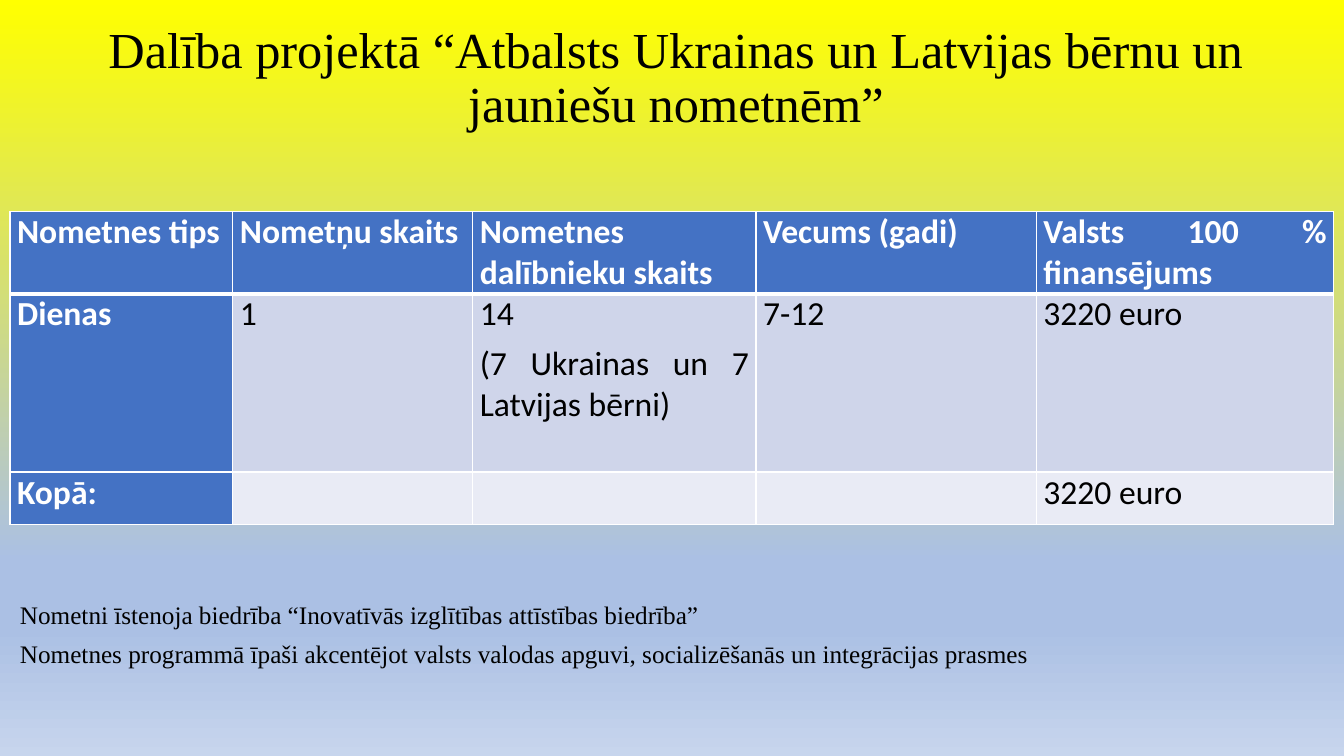
import dataclasses

import lxml.etree
import pptx
import pptx.dml.color
import pptx.enum.text
import pptx.oxml
import pptx.oxml.ns
import pptx.util

WIDE = pptx.util.Inches(13.33)
HIGH = pptx.util.Inches(7.5)
ALIGN = pptx.enum.text.PP_ALIGN
ANCHOR = pptx.enum.text.MSO_ANCHOR
BLACK, WHITE, BLUE = "000000", "FFFFFF", "4472C4"
BANDS = ("CFD5EA", "E9EBF5")
STOPS = ((0, "FFFF00"), (74, "ABC0E4"), (83, "ABC0E4"), (100, "C7D5ED"))
COLS = (16.58, 17.85, 21.08, 20.86, 22.13)
ROWS = (10.8, 23.6, 6.93)
CELLS = (
    ("Nometnes tips", "Nometņu skaits", "Nometnes dalībnieku skaits",
     "Vecums (gadi)", "Valsts 100 % finansējums"),
    ("Dienas", "1", "14\n(7 Ukrainas un 7 Latvijas bērni)", "7-12", "3220 euro"),
    ("Kopā:", "", "", "", "3220 euro"),
)


@dataclasses.dataclass(frozen=True)
class Box:
    left: float
    top: float
    width: float
    height: float


@dataclasses.dataclass(frozen=True)
class Style:
    font: dict
    para: dict
    hue: str = BLACK


@dataclasses.dataclass(frozen=True)
class Block:
    box: Box
    text: str
    style: Style
    anchor: ANCHOR


BODY = {"alignment": ALIGN.JUSTIFY, "space_after": pptx.util.Pt(6)}
HEAD = {"alignment": ALIGN.CENTER, "line_spacing": 0.9}
GRID = Box(0.75, 28, sum(COLS), sum(ROWS))
BLOCKS = (
    Block(Box(3.68, 2, 93.25, 17),
          "Dalība projektā “Atbalsts Ukrainas un Latvijas bērnu un jauniešu nometnēm”",
          Style({"name": "Times New Roman", "size": pptx.util.Pt(36)}, HEAD),
          ANCHOR.MIDDLE),
    Block(Box(0.75, 78.67, 97.3, 10.53),
          "Nometni īstenoja biedrība “Inovatīvās izglītības attīstības biedrība”\n"
          "Nometnes programmā īpaši akcentējot valsts valodas apguvi, "
          "socializēšanās un integrācijas prasmes",
          Style({"name": "Times New Roman", "size": pptx.util.Pt(18)}, BODY),
          ANCHOR.TOP),
)


def share(part: float, whole: int) -> int:
    return round(whole * part / 100)


def place(box: Box) -> tuple:
    return (share(box.left, WIDE), share(box.top, HIGH),
            share(box.width, WIDE), share(box.height, HIGH))


def paint(hue: str) -> pptx.dml.color.RGBColor:
    return pptx.dml.color.RGBColor.from_string(hue)


def apply(thing, form: dict) -> None:
    for key, value in form.items():
        setattr(thing, key, value)


def write(frame, text: str, style: Style) -> None:
    frame.text = text
    for para in frame.paragraphs:
        apply(para, style.para)
        for run in para.runs:
            apply(run.font, style.font)
            run.font.color.rgb = paint(style.hue)


def shade(slide) -> None:
    stops = "".join(f'<a:gs pos="{pos * 1000}"><a:srgbClr val="{hue}"/></a:gs>'
                    for pos, hue in STOPS)
    spaces = pptx.oxml.ns.nsdecls("a")
    grade = pptx.oxml.parse_xml(
        f'<a:gradFill {spaces} rotWithShape="1"><a:gsLst>{stops}</a:gsLst>'
        '<a:lin ang="5400000" scaled="0"/></a:gradFill>')
    fill = slide.background.fill
    fill.solid()
    solid = slide.element.find(".//" + pptx.oxml.ns.qn("a:solidFill"))
    solid.getparent().replace(solid, grade)


def edge(cell, sides: dict) -> None:
    props = cell._tc.get_or_add_tcPr()
    for spot, (side, width) in enumerate(sides.items()):
        line = lxml.etree.Element(pptx.oxml.ns.qn(f"a:ln{side}"),
                                  w=str(pptx.util.Pt(width)))
        solid = lxml.etree.SubElement(line, pptx.oxml.ns.qn("a:solidFill"))
        lxml.etree.SubElement(solid, pptx.oxml.ns.qn("a:srgbClr"), val=WHITE)
        props.insert(spot, line)


def draw_block(slide, block: Block) -> None:
    frame = slide.shapes.add_textbox(*place(block.box)).text_frame
    apply(frame, {"word_wrap": True, "vertical_anchor": block.anchor})
    write(frame, block.text, block.style)


def draw_cell(cell, row: int, col: int) -> None:
    head = row == 0 or col == 0
    side = pptx.util.Inches(0.07)
    apply(cell, {"margin_left": side, "margin_right": side,
                 "margin_top": 0, "margin_bottom": 0})
    cell.fill.solid()
    cell.fill.fore_color.rgb = paint(BLUE if head else BANDS[row - 1])
    font = {"name": "Calibri", "size": pptx.util.Pt(24), "bold": head}
    write(cell.text_frame, CELLS[row][col],
          Style(font, BODY, WHITE if head else BLACK))
    edge(cell, {"L": 1, "R": 1, "T": 3 if row == 1 else 1,
                "B": 3 if row == 0 else 1})


def draw_grid(slide) -> None:
    table = slide.shapes.add_table(len(ROWS), len(COLS), *place(GRID)).table
    for col, part in zip(table.columns, COLS):
        col.width = share(part, WIDE)
    for row, part in zip(table.rows, ROWS):
        row.height = share(part, HIGH)
    for row in range(len(ROWS)):
        for col in range(len(COLS)):
            draw_cell(table.cell(row, col), row, col)


def main() -> None:
    deck = pptx.Presentation()
    apply(deck, {"slide_width": WIDE, "slide_height": HIGH})
    slide = deck.slides.add_slide(deck.slide_layouts[6])
    shade(slide)
    draw_grid(slide)
    for block in BLOCKS:
        draw_block(slide, block)
    deck.save("out.pptx")


if __name__ == "__main__":
    main()
